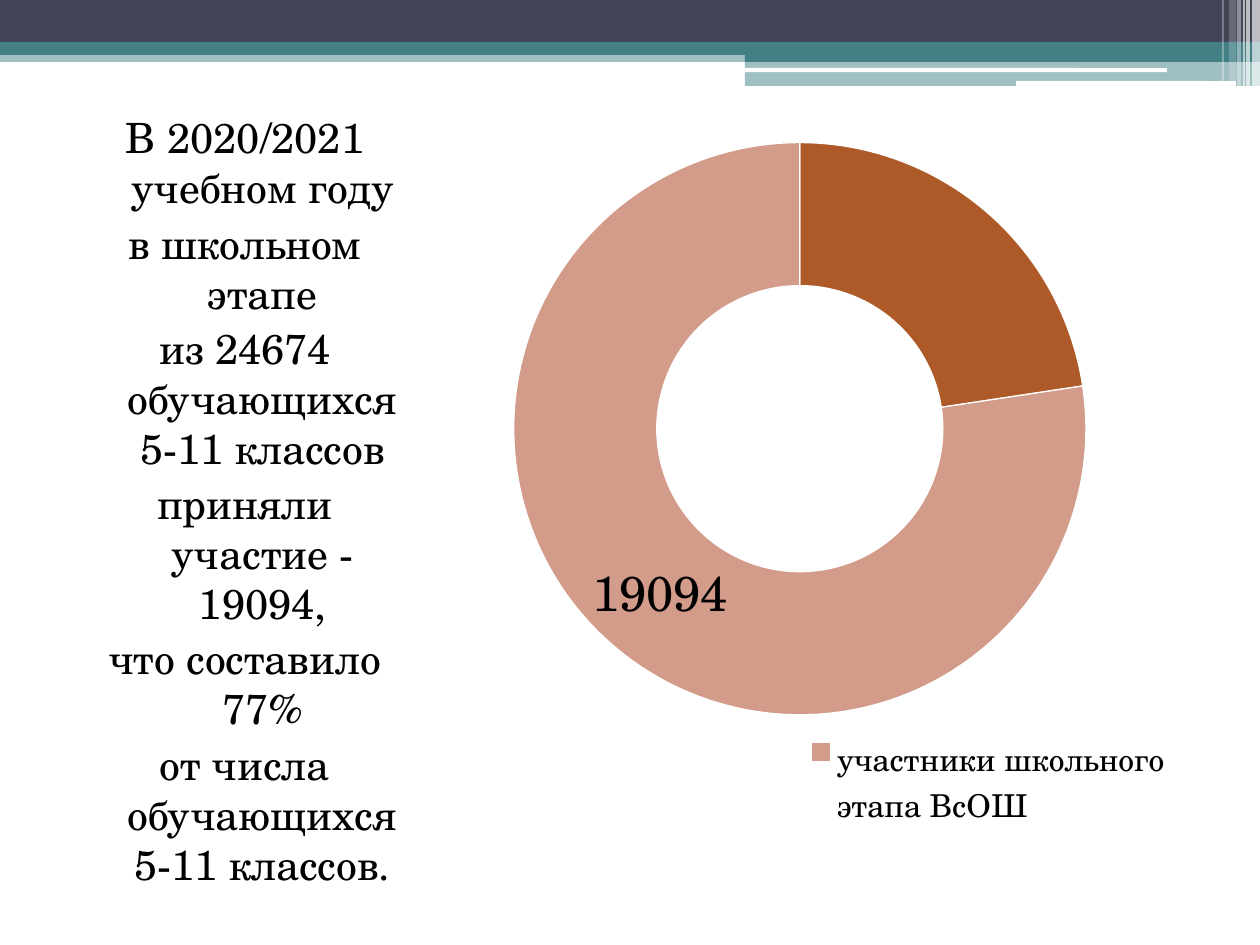
from pptx import Presentation
from pptx.chart.data import CategoryChartData
from pptx.dml.color import RGBColor
from pptx.enum.chart import XL_CHART_TYPE, XL_LEGEND_POSITION
from pptx.enum.shapes import MSO_SHAPE
from pptx.enum.text import PP_ALIGN
from pptx.oxml import parse_xml
from pptx.oxml.ns import nsdecls, qn
from pptx.util import Pt

PX = 914400 / 126
FONT = "TeX Gyre Schola"
BLACK = RGBColor(0x00, 0x00, 0x00)
WHITE = RGBColor(0xFF, 0xFF, 0xFF)
NAVY = RGBColor(0x42, 0x44, 0x56)
TEAL = RGBColor(0x43, 0x80, 0x86)
RUST = RGBColor(0xAD, 0x5A, 0x28)
ROSE = RGBColor(0xD3, 0x9B, 0x89)
RECT = MSO_SHAPE.RECTANGLE
ROUNDED = MSO_SHAPE.ROUNDED_RECTANGLE
DOUGHNUT = XL_CHART_TYPE.DOUGHNUT
RIGHT = XL_LEGEND_POSITION.RIGHT
CENTER = PP_ALIGN.CENTER

# kind, left, top, width, height, colour, opacity in percent
BANDS = [
    (RECT, 0, 50, 1260, 12, TEAL, 50),
    (RECT, 0, 0, 1260, 43, NAVY, 100),
    (RECT, 0, 42, 1260, 13, TEAL, 100),
    (RECT, 745, 49, 515, 13, TEAL, 100),
    (RECT, 745, 61, 515, 25, TEAL, 50),
    (ROUNDED, 745, 68, 422, 4, WHITE, 100),
    (ROUNDED, 1016, 81, 220, 5, WHITE, 100),
]
# left, width, height, opacity in percent
STRIPES = [
    (1252, 8, 86, 65),
    (1246, 4, 86, 65),
    (1243, 2, 86, 60),
    (1237, 4, 86, 40),
    (1229, 7, 81, 20),
    (1222, 2, 81, 30),
]
PUPILS = 24674
PARTICIPANTS = 19094
LINES = [
    "В 2020/2021 учебном году",
    "в школьном этапе",
    f"из {PUPILS} обучающихся 5-11 классов",
    f"приняли участие - {PARTICIPANTS},",
    "что составило 77%",
    "от числа обучающихся 5-11 классов.",
]
# The rest of the ring has neither a name nor a label.
GROUPS = [
    ("", PUPILS - PARTICIPANTS, RUST),
    ("участники школьного этапа ВсОШ", PARTICIPANTS, ROSE),
]


def px(*lengths):
    return [round(length * PX) for length in lengths]


def add_band(page, kind, left, top, width, height, colour, opacity):
    band = page.shapes.add_shape(kind, *px(left, top, width, height))
    band.shadow.inherit = False
    band.line.fill.background()
    band.fill.solid()
    band.fill.fore_color.rgb = colour
    if opacity < 100:
        alpha = parse_xml(f'<a:alpha {nsdecls("a")} val="{opacity * 1000}"/>')
        band.fill._xPr.find(".//" + qn("a:srgbClr")).append(alpha)


def add_header(page, left, top):
    for kind, x, y, width, height, colour, opacity in BANDS:
        add_band(page, kind, left + x, top + y, width, height, colour, opacity)
    for x, width, height, opacity in STRIPES:
        add_band(page, RECT, left + x, top, width, height, WHITE, opacity)


def add_summary(page, left, top, width, height):
    box = page.shapes.add_textbox(*px(left, top, width, height))
    frame = box.text_frame
    frame.word_wrap = True
    margin, indent = px(50, -35)
    for index, line in enumerate(LINES):
        para = frame.add_paragraph() if index else frame.paragraphs[0]
        para.text = line
        para.alignment = CENTER
        para.space_before = Pt(3 if index else 0)
        properties = para._p.get_or_add_pPr()
        properties.set("marL", str(margin))
        properties.set("indent", str(indent))
        para.font.name = FONT
        para.font.size = Pt(23.8)
        para.font.color.rgb = BLACK


def set_layout(parent, index, target, x, y, width, height):
    """Place a chart part by fractions of the chart area."""
    for old in parent.findall(qn("c:layout")):
        parent.remove(old)
    inner = f'<c:layoutTarget val="{target}"/>' if target else ""
    parent.insert(index, parse_xml(
        f'<c:layout {nsdecls("c")}><c:manualLayout>{inner}'
        '<c:xMode val="edge"/><c:yMode val="edge"/>'
        f'<c:x val="{x}"/><c:y val="{y}"/><c:w val="{width}"/><c:h val="{height}"/>'
        '</c:manualLayout></c:layout>'))


def set_font(font, size):
    font.name = FONT
    font.size = Pt(size)
    font.color.rgb = BLACK


def add_doughnut(page, left, top, width, height):
    data = CategoryChartData()
    data.categories = [name for name, value, colour in GROUPS]
    data.add_series("", [value for name, value, colour in GROUPS])
    chart = page.shapes.add_chart(DOUGHNUT, *px(left, top, width, height), data).chart
    chart.has_title = False
    set_font(chart.font, 18)
    set_layout(chart._chartSpace.chart.plotArea, 0, "inner", 0.07, 0.02, 0.76, 0.75)

    plot = chart.plots[0]
    plot.vary_by_categories = True
    series = plot.series[0]
    for index, (name, value, colour) in enumerate(GROUPS):
        part = series.points[index].format
        part.fill.solid()
        part.fill.fore_color.rgb = colour
        part.line.color.rgb = WHITE
        part.line.width = Pt(0.75)

    labels = series.data_labels
    labels.show_value = True
    labels.show_percentage = False
    set_font(labels.font, 28)
    labels._element.insert(0, parse_xml(
        f'<c:dLbl {nsdecls("c")}><c:idx val="0"/><c:delete val="1"/></c:dLbl>'))

    chart.has_legend = True
    legend = chart.legend
    legend.position = RIGHT
    legend.include_in_layout = False
    set_font(legend.font, 18)
    legend._element.insert(1, parse_xml(
        f'<c:legendEntry {nsdecls("c")}><c:idx val="0"/><c:delete val="1"/></c:legendEntry>'))
    set_layout(legend._element, 2, None, 0.45, 0.79, 0.5, 0.13)


def main():
    deck = Presentation()
    deck.slide_width, deck.slide_height = px(1260, 945)
    page = deck.slides.add_slide(deck.slide_layouts[6])
    add_header(page, 0, 0)
    add_summary(page, 63, 106, 349, 794)
    add_doughnut(page, 461, 125, 753, 769)
    deck.save("out.pptx")


if __name__ == "__main__":
    main()
